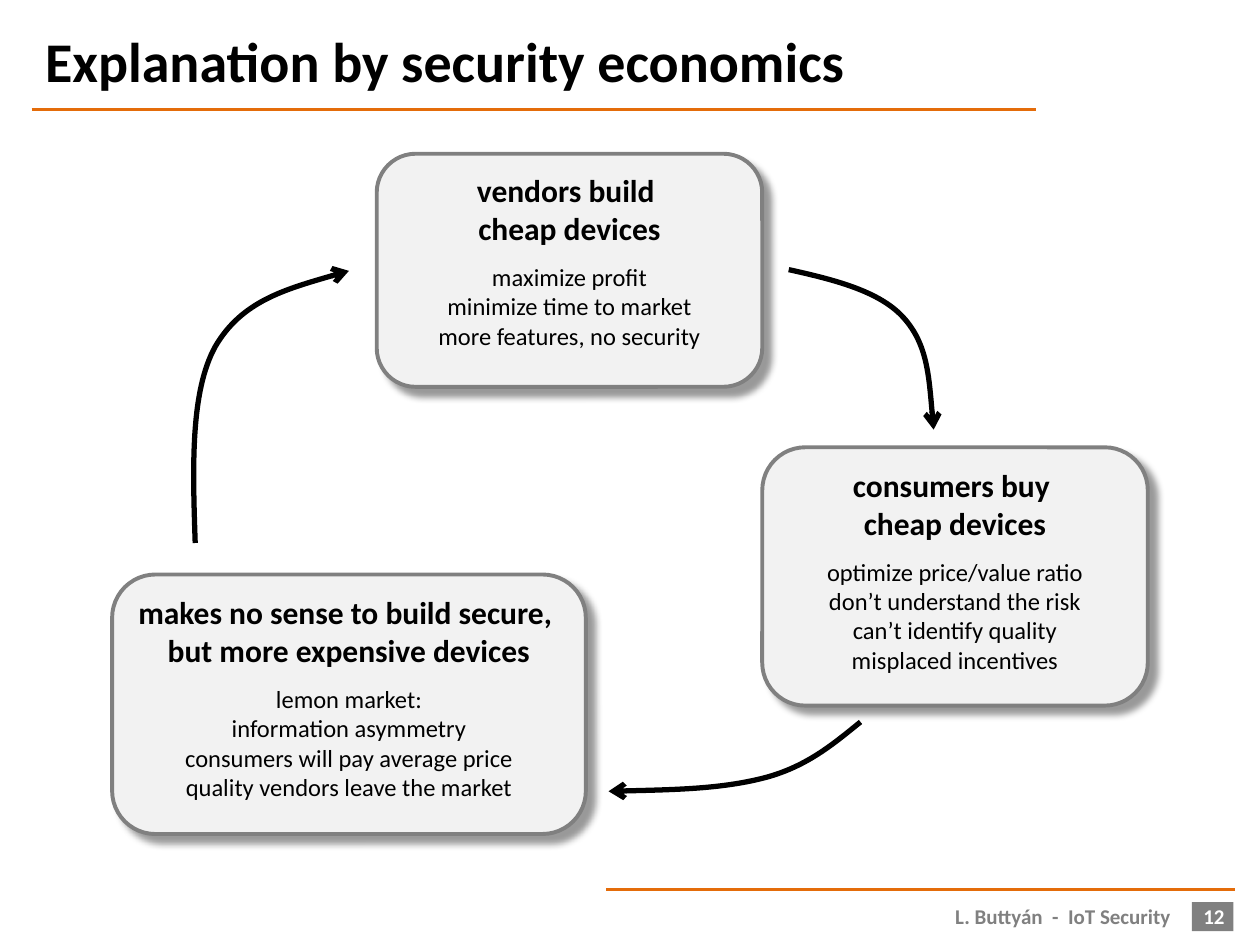
from dataclasses import dataclass

import pptx
import pptx.dml.color
import pptx.enum.shapes
import pptx.enum.text
import pptx.oxml
import pptx.oxml.ns
import pptx.util
from pptx.util import Inches, Pt

FONT = "Calibri"
BLACK, WHITE, GREY, PALE, ORANGE = "000000", "FFFFFF", "808080", "F2F2F2", "E46C0A"
ALIGN = pptx.enum.text.PP_ALIGN
ANCHOR = pptx.enum.text.MSO_ANCHOR
SHAPE = pptx.enum.shapes.MSO_SHAPE
qn = pptx.oxml.ns.qn
Point = tuple[float, float]


@dataclass
class Stage:
    left: float
    top: float
    width: float
    height: float
    heading: list[str]
    reasons: list[str]


@dataclass
class Flow:
    """A start point followed by three points for each Bezier segment."""
    points: list[Point]


STAGES = [
    Stage(2.99, 1.22, 3.06, 1.85,
          ["vendors build ", "cheap devices"],
          ["maximize profit", "minimize time to market",
           "more features, no security"]),
    Stage(6.05, 3.55, 3.06, 2.05,
          ["consumers buy ", "cheap devices"],
          ["optimize price/value ratio", "don’t understand the risk",
           "can’t identify quality", "misplaced incentives"]),
    Stage(0.89, 4.56, 3.76, 2.06,
          ["makes no sense to build secure, ", "but more expensive devices"],
          ["lemon market:", "information asymmetry",
           "consumers will pay average price",
           "quality vendors leave the market"]),
]

FLOWS = [
    Flow([(6.26, 2.14), (6.62, 2.22), (6.98, 2.31), (7.17, 2.52),
          (7.36, 2.73), (7.38, 3.07), (7.41, 3.41)]),
    Flow([(6.83, 5.73), (6.62, 5.9), (6.41, 6.08), (6.08, 6.17),
          (5.74, 6.26), (5.29, 6.27), (4.83, 6.28)]),
    Flow([(1.55, 4.31), (1.53, 3.71), (1.51, 3.11), (1.71, 2.75),
          (1.92, 2.39), (2.35, 2.27), (2.77, 2.15)]),
]


def rgb(value: str) -> pptx.dml.color.RGBColor:
    return pptx.dml.color.RGBColor.from_string(value)


def xml(tag: str, inner: str = "", attributes: str = ""):
    """Return a DrawingML element."""
    namespace = pptx.oxml.ns.nsdecls("a")
    return pptx.oxml.parse_xml(
        f"<a:{tag} {namespace} {attributes}>{inner}</a:{tag}>")


def write(frame, text: str, *, size: float, color: str = BLACK,
          bold: bool = False, align=ALIGN.CENTER, before: float = 0) -> None:
    """Add one paragraph, filling the empty first one when there is one."""
    first = frame.paragraphs[0]
    paragraph = frame.add_paragraph() if first.runs else first
    paragraph.alignment = align
    if before:
        paragraph.space_before = Pt(before)
    run = paragraph.add_run()
    run.text = text
    run.font.name = FONT
    run.font.size = Pt(size)
    run.font.bold = bold
    run.font.color.rgb = rgb(color)


def add_label(slide, left: float, top: float, width: float, height: float,
              text: str, **style) -> None:
    box = slide.shapes.add_textbox(
        Inches(left), Inches(top), Inches(width), Inches(height))
    box.text_frame.word_wrap = True
    box.text_frame.vertical_anchor = ANCHOR.MIDDLE
    write(box.text_frame, text, bold=True, **style)


def add_rule(slide, left: float, right: float, y: float) -> None:
    rule = slide.shapes.add_connector(
        pptx.enum.shapes.MSO_CONNECTOR.STRAIGHT,
        Inches(left), Inches(y), Inches(right), Inches(y))
    rule.line.color.rgb = rgb(ORANGE)
    rule.line.width = Pt(1.5)
    rule._element.spPr.append(xml("effectLst"))


def add_stage(slide, stage: Stage) -> None:
    card = slide.shapes.add_shape(
        SHAPE.ROUNDED_RECTANGLE, Inches(stage.left), Inches(stage.top),
        Inches(stage.width), Inches(stage.height))
    card.fill.solid()
    card.fill.fore_color.rgb = rgb(PALE)
    card.line.color.rgb = rgb(GREY)
    card.line.width = Pt(2.25)
    shadow_color = f'<a:srgbClr val="{BLACK}"><a:alpha val="40000"/></a:srgbClr>'
    card._element.spPr.append(xml(
        "effectLst",
        f'<a:outerShdw blurRad="{Pt(4)}" dist="{Pt(6)}" dir="2700000" '
        f'algn="tl" rotWithShape="0">{shadow_color}</a:outerShdw>'))
    frame = card.text_frame
    frame.word_wrap = True
    frame.vertical_anchor = ANCHOR.TOP
    for line in stage.heading:
        write(frame, line, size=18, bold=True)
    for index, reason in enumerate(stage.reasons):
        write(frame, reason, size=14, before=0 if index else 8.5)


def add_flow(slide, flow: Flow) -> None:
    """Draw a curved arrow by turning each three line steps into a Bezier."""
    start, *rest = [(Inches(x), Inches(y)) for x, y in flow.points]
    builder = slide.shapes.build_freeform(*start)
    builder.add_line_segments(rest, close=False)
    arrow = builder.convert_to_shape()
    outline = arrow._element.spPr.find(".//" + qn("a:path"))
    steps = outline.findall(qn("a:lnTo"))
    for index in range(0, len(steps), 3):
        curve = xml("cubicBezTo")
        for step in steps[index:index + 3]:
            curve.append(step[0])
            outline.remove(step)
        outline.append(curve)
    arrow.fill.background()
    arrow.line.color.rgb = rgb(BLACK)
    arrow.line.width = Pt(3)
    arrow.line._get_or_add_ln().append(xml("tailEnd", attributes='type="arrow"'))
    arrow.shadow.inherit = False


def add_footer(slide) -> None:
    badge = slide.shapes.add_shape(
        SHAPE.RECTANGLE, Inches(9.46), Inches(7.16), Inches(0.33), Inches(0.23))
    badge.fill.solid()
    badge.fill.fore_color.rgb = rgb(GREY)
    badge.line.fill.background()
    badge.shadow.inherit = False
    add_rule(slide, 4.81, 9.8, 7.06)
    add_label(slide, 4.81, 7.11, 4.58, 0.32, "L. Buttyán  -  IoT Security",
              size=12, color=GREY, align=ALIGN.RIGHT)
    add_label(slide, 9.4, 7.11, 0.47, 0.32, "12", size=12, color=WHITE)


def main() -> None:
    deck = pptx.Presentation()
    deck.slide_width, deck.slide_height = Inches(10), Inches(7.5)
    slide = deck.slides.add_slide(deck.slide_layouts[6])
    add_rule(slide, 0.25, 8.22, 0.87)
    add_label(slide, 0.26, 0.13, 7.97, 0.69, "Explanation by security economics",
              size=32, align=ALIGN.LEFT)
    for stage in STAGES:
        add_stage(slide, stage)
    for flow in FLOWS:
        add_flow(slide, flow)
    add_footer(slide)
    deck.save("out.pptx")


if __name__ == "__main__":
    main()
